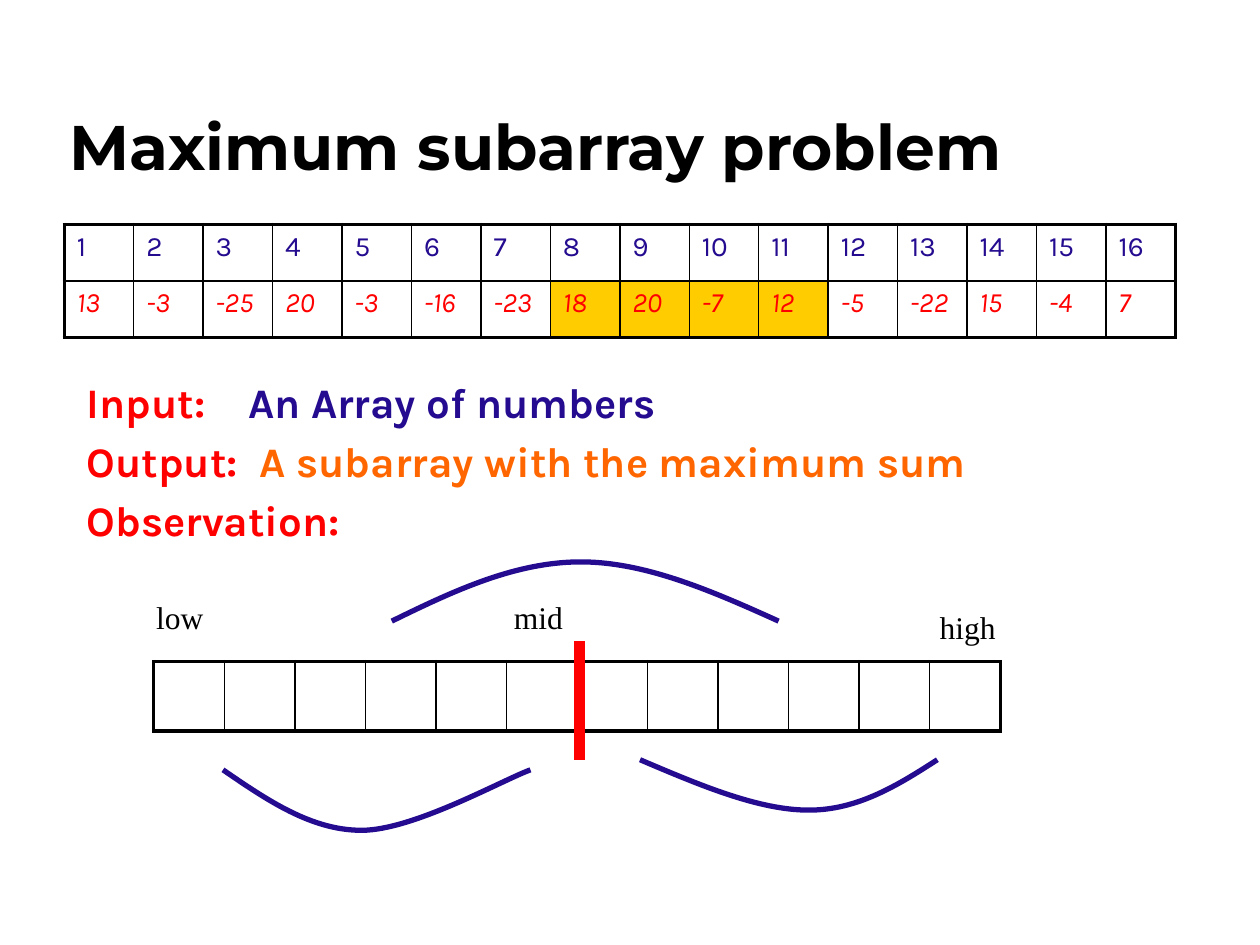
from lxml import etree
from pptx import Presentation
from pptx.dml.color import RGBColor
from pptx.enum.shapes import MSO_CONNECTOR
from pptx.enum.text import MSO_ANCHOR, MSO_AUTO_SIZE
from pptx.oxml.ns import qn
from pptx.util import Inches, Pt

STRAIGHT = MSO_CONNECTOR.STRAIGHT
TOP, BOTTOM = MSO_ANCHOR.TOP, MSO_ANCHOR.BOTTOM
FIT_SHAPE = MSO_AUTO_SIZE.SHAPE_TO_FIT_TEXT

COLORS = {
    "black": "000000",
    "red": "FF0000",
    "navy": "240B8F",
    "orange": "FF6600",
    "gold": "FFCC00",
}
VALUES = [13, -3, -25, 20, -3, -16, -23, 18, 20, -7, 12, -5, -22, 15, -4, 7]
BEST_RANGE = range(7, 11)
STATEMENTS = [
    ("Input:", "An Array of numbers", "navy", 1.28),
    ("Output:", "A subarray with the maximum sum", "orange", 1.37),
    ("Observation:", "", "red", None),
]
LABELS = [("low", 1.14, 4.7, 0.58), ("mid", 3.98, 4.7, 0.59), ("high", 7.36, 4.78, 0.65)]
ARCS = [
    [(1.77, 6.11), (2.12, 6.35), (2.47, 6.59), (2.87, 6.59),
     (3.28, 6.59), (3.99, 6.19), (4.21, 6.11)],
    [(5.08, 6.03), (5.55, 6.23), (6.02, 6.43), (6.42, 6.43),
     (6.81, 6.43), (7.13, 6.23), (7.44, 6.03)],
    [(3.11, 4.93), (3.6, 4.69), (4.09, 4.46), (4.61, 4.46),
     (5.12, 4.46), (5.65, 4.69), (6.18, 4.93)],
]


def rgb(name):
    return RGBColor.from_string(COLORS[name])


class SlideBuilder:
    def __init__(self, slide):
        self.shapes = slide.shapes
        self.thick, self.thin = 2.25, 1

    def font(self, target, name, size, color, bold=False, italic=False):
        font = target.font
        font.name, font.size = name, Pt(size)
        font.bold, font.italic = bold, italic
        font.color.rgb = rgb(color)

    def text_box(self, left, top, width, height, anchor=TOP, wrap=True):
        box = self.shapes.add_textbox(Inches(left), Inches(top), Inches(width), Inches(height))
        frame = box.text_frame
        frame.word_wrap = wrap
        frame.vertical_anchor = anchor
        return frame

    def title(self, text):
        para = self.text_box(0.45, 0.25, 8.5, 1.25, BOTTOM).paragraphs[0]
        para.text = text
        self.font(para, "Montserrat", 36, "black", bold=True)

    def label(self, text, left, top, width):
        frame = self.text_box(left, top, width, 0.4, wrap=False)
        frame.auto_size = FIT_SHAPE
        para = frame.paragraphs[0]
        para.text = text
        self.font(para, "Times New Roman", 18, "black")

    def statements(self, rows):
        frame = self.text_box(0.59, 2.94, 8.98, 4.04)
        for index, (heading, detail, color, tab) in enumerate(rows):
            para = frame.add_paragraph() if index else frame.paragraphs[0]
            para.space_after = Pt(4.8)
            self.font(para, "Karla", 24, "red", bold=True)
            span = para.add_run()
            span.text = heading
            if detail:
                self.tab_stop(para, tab)
                span.text += "\t"
                span = para.add_run()
                span.text = detail
                span.font.color.rgb = rgb(color)

    def tab_stop(self, para, position):
        properties = para._p.get_or_add_pPr()
        stops = etree.Element(qn("a:tabLst"))
        etree.SubElement(stops, qn("a:tab"), pos=str(Inches(position)), algn="l")
        properties.find(qn("a:defRPr")).addprevious(stops)

    def borders(self, cell, outer_sides):
        properties = cell._tc.get_or_add_tcPr()
        for side in "LRTB":
            width = Pt(self.thick if side in outer_sides else self.thin)
            line = etree.SubElement(properties, qn(f"a:ln{side}"), w=str(width))
            fill = etree.SubElement(line, qn("a:solidFill"))
            etree.SubElement(fill, qn("a:srgbClr"), val=COLORS["black"])

    def grid(self, rows, columns, left, top, width, height):
        table = self.shapes.add_table(
            rows, columns, Inches(left), Inches(top), Inches(width), Inches(height)
        ).table
        table.first_row = table.horz_banding = False
        for row in range(rows):
            for column in range(columns):
                edges = {"L": column == 0, "R": column == columns - 1,
                         "T": row == 0, "B": row == rows - 1}
                cell = table.cell(row, column)
                self.borders(cell, [side for side, outer in edges.items() if outer])
                cell.fill.background()
        return table

    def cell_text(self, cell, text, color, italic=False):
        para = cell.text_frame.paragraphs[0]
        para.text = text
        self.font(para, "Karla", 16, color, italic=italic)

    def number_table(self, values):
        table = self.grid(2, len(values), 0.51, 1.78, 8.82, 0.9)
        for column, value in enumerate(values):
            self.cell_text(table.cell(0, column), str(column + 1), "navy")
            cell = table.cell(1, column)
            self.cell_text(cell, str(value), "red", italic=True)
            if column in BEST_RANGE:
                cell.fill.solid()
                cell.fill.fore_color.rgb = rgb("gold")

    def line(self, start, end, color, width):
        connector = self.shapes.add_connector(STRAIGHT, *map(Inches, start + end))
        connector.line.color.rgb = rgb(color)
        connector.line.width = Pt(width)
        etree.SubElement(connector._element.spPr, qn("a:effectLst"))

    def arc(self, controls):
        start, *rest = [(Inches(x), Inches(y)) for x, y in controls]
        builder = self.shapes.build_freeform(*start)
        builder.add_line_segments(rest, close=False)
        curve = builder.convert_to_shape()
        self.bend(curve)
        curve.shadow.inherit = False
        curve.fill.background()
        curve.line.color.rgb = rgb("navy")
        curve.line.width = Pt(3)

    def bend(self, curve):
        segments = list(curve._element.iter(qn("a:lnTo")))
        outline = segments[0].getparent()
        for first in range(0, len(segments), 3):
            bezier = etree.SubElement(outline, qn("a:cubicBezTo"))
            for segment in segments[first:first + 3]:
                bezier.append(segment[0])
                outline.remove(segment)


def main():
    deck = Presentation()
    deck.slide_width, deck.slide_height = Inches(10), Inches(7.5)
    page = SlideBuilder(deck.slides.add_slide(deck.slide_layouts[6]))
    page.title("Maximum subarray problem")
    page.statements(STATEMENTS)
    page.number_table(VALUES)
    page.grid(1, 12, 1.22, 5.25, 6.72, 0.55)
    for label in LABELS:
        page.label(*label)
    page.line((4.6, 6.03), (4.6, 5.09), "red", 6)
    for controls in ARCS:
        page.arc(controls)
    deck.save("out.pptx")


if __name__ == "__main__":
    main()
